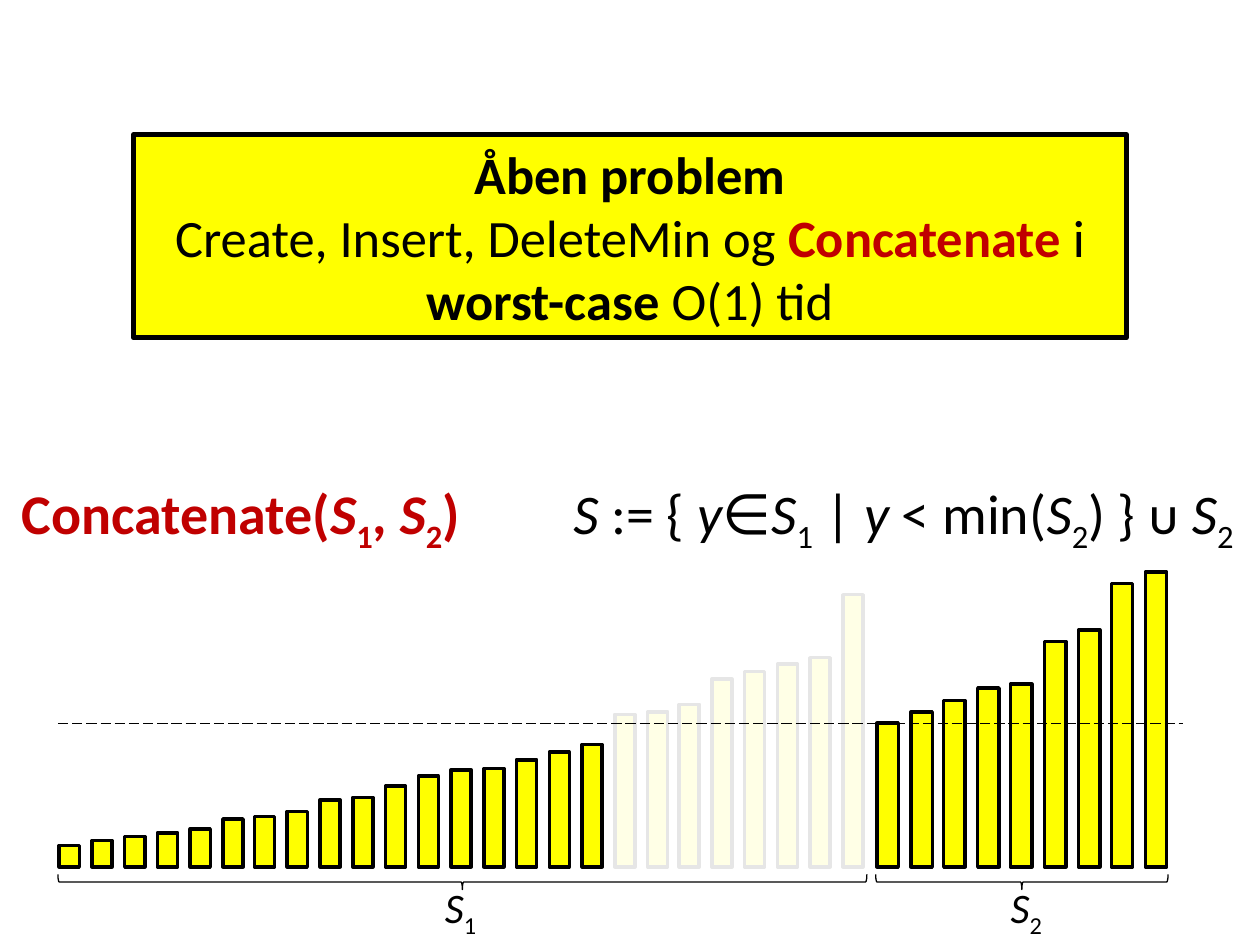
"""Build the slide stating the open problem of constant-time Concatenate."""
from dataclasses import dataclass
from typing import NamedTuple

from lxml.etree import SubElement
from pptx import Presentation
from pptx.dml.color import RGBColor
from pptx.enum.dml import MSO_LINE_DASH_STYLE as Dash
from pptx.enum.shapes import MSO_CONNECTOR as Connector, MSO_SHAPE as Shape
from pptx.enum.text import MSO_ANCHOR as Anchor, MSO_AUTO_SIZE as AutoSize, PP_ALIGN as Align
from pptx.oxml.ns import qn
from pptx.util import Emu, Pt

EMU_PER_PX = 9144


@dataclass(frozen=True)
class Theme:
    font: str = "Calibri"
    ink: RGBColor = RGBColor(0, 0, 0)
    paper: RGBColor = RGBColor(255, 255, 255)
    highlight: RGBColor = RGBColor(255, 255, 0)
    accent: RGBColor = RGBColor(192, 0, 0)
    problem_size: int = 30
    formula_size: int = 32
    label_size: int = 24
    thin: float = 0.75
    bar_line: float = 2
    box_line: float = 3


THEME = Theme()


class Box(NamedTuple):
    left: int
    top: int
    width: int
    height: int


class Run(NamedTuple):
    text: str
    bold: bool = False
    italic: bool = False
    subscript: bool = False
    color: RGBColor = THEME.ink


@dataclass(frozen=True)
class BarGroup:
    index: str
    left: int
    span: int
    bar_width: int
    tops: tuple[int, ...]
    brace: Box
    label: Box


BASELINE = 688
BAR_GROUPS = (
    BarGroup(
        "1", 47, 622, 16,
        (671, 667, 664, 661, 658, 650, 648, 644, 635, 633, 624, 616, 611,
         610, 603, 597, 591, 567, 565, 559, 539, 533, 527, 522, 472),
        Box(361, 379, 12, 642), Box(287, 695, 157, 50),
    ),
    BarGroup(
        "2", 696, 213, 17,
        (574, 565, 556, 546, 543, 509, 500, 463, 454),
        Box(805, 584, 12, 232), Box(736, 695, 157, 50),
    ),
)


def px(length: float) -> Emu:
    """Turn px into EMU."""
    return Emu(round(length * EMU_PER_PX))


def place(box: Box) -> tuple[Emu, ...]:
    """Turn a box into EMU lengths."""
    return tuple(px(length) for length in box)


def set_name(index: str, bold: bool = False, color: RGBColor = THEME.ink) -> list[Run]:
    """Return the runs of an indexed set S."""
    return [Run("S", bold, True, color=color), Run(index, bold, subscript=True, color=color)]


def write(paragraph, runs: list[Run], size: int) -> None:
    """Add centred runs to a paragraph."""
    paragraph.alignment = Align.CENTER
    for item in runs:
        run = paragraph.add_run()
        run.text = item.text
        font = run.font
        font.name, font.size = THEME.font, Pt(size)
        font.bold, font.italic = item.bold, item.italic
        font.color.rgb = item.color
        if item.subscript:
            font._element.set("baseline", "-25000")


def draw_rectangle(slide, box: Box, fill: RGBColor, line_width: float = 0):
    """Draw a filled rectangle, outlined when a line width is given."""
    shape = slide.shapes.add_shape(Shape.RECTANGLE, *place(box))
    shape.shadow.inherit = False
    shape.fill.solid()
    shape.fill.fore_color.rgb = fill
    if line_width:
        shape.line.color.rgb = THEME.ink
        shape.line.width = Pt(line_width)
    else:
        shape.line.fill.background()
    return shape


def draw_problem(slide) -> None:
    """Draw the highlighted problem statement."""
    shape = draw_rectangle(slide, Box(106, 107, 788, 161), THEME.highlight, THEME.box_line)
    frame = shape.text_frame
    frame.word_wrap = True
    frame.vertical_anchor = Anchor.MIDDLE
    write(frame.paragraphs[0], [Run("Åben problem", True)], THEME.problem_size)
    statement = [
        Run("Create, Insert, DeleteMin og "),
        Run("Concatenate", True, color=THEME.accent),
        Run(" i "),
        Run("worst-case ", True),
        Run("O(1) tid"),
    ]
    write(frame.add_paragraph(), statement, THEME.problem_size)


def draw_bars(slide, group: BarGroup) -> None:
    """Draw evenly spaced bars standing on the baseline."""
    pitch = group.span / (len(group.tops) - 1)
    for position, top in enumerate(group.tops):
        left = round(group.left + position * pitch)
        box = Box(left, top, group.bar_width, BASELINE - top)
        draw_rectangle(slide, box, THEME.highlight, THEME.bar_line)


def draw_formula(slide) -> None:
    """Write the definition of Concatenate in the body placeholder."""
    body = slide.placeholders[1]
    body.left, body.top, body.width, body.height = place(Box(4, 375, 988, 63))
    frame = body.text_frame
    frame.word_wrap = True
    frame.auto_size = AutoSize.NONE
    paragraph = frame.paragraphs[0]
    accent = THEME.accent
    runs = [
        Run("Concatenate(", True, color=accent), *set_name("1", True, accent),
        Run(", ", True, color=accent), *set_name("2", True, accent),
        Run(")\t", True, color=accent),
        Run("S", italic=True), Run(" := { "), Run("y", italic=True), Run("∈"),
        *set_name("1"), Run(" | "), Run("y ", italic=True), Run("< min("),
        *set_name("2"), Run(") } ᴜ "), *set_name("2"),
    ]
    write(paragraph, runs, THEME.formula_size)
    properties = paragraph._p.get_or_add_pPr()
    properties.set("marL", str(px(38)))
    properties.set("indent", str(px(-38)))
    properties.set("defTabSz", str(px(100)))
    SubElement(properties, qn("a:buNone"))
    tabs = SubElement(properties, qn("a:tabLst"))
    for position in (235, 400):
        SubElement(tabs, qn("a:tab"), pos=str(px(position)), algn="l")


def draw_veil(slide) -> None:
    """Fade the elements dropped by Concatenate."""
    veil = draw_rectangle(slide, Box(484, 462, 205, 235), THEME.paper)
    color = veil.fill._xPr.find(qn("a:solidFill"))[0]
    SubElement(color, qn("a:alpha"), val="90000")


def draw_brace(slide, group: BarGroup) -> None:
    """Draw the brace under a bar group and its label."""
    brace = slide.shapes.add_shape(Shape.LEFT_BRACE, *place(group.brace))
    brace.rotation = 270
    brace.shadow.inherit = False
    brace.fill.background()
    brace.line.color.rgb = THEME.ink
    brace.line.width = Pt(THEME.thin)
    frame = slide.shapes.add_textbox(*place(group.label)).text_frame
    frame.word_wrap = True
    write(frame.paragraphs[0], set_name(group.index), THEME.label_size)


def draw_threshold(slide) -> None:
    """Draw the dashed line at the minimum of the second set."""
    level = px(BAR_GROUPS[1].tops[0])
    line = slide.shapes.add_connector(Connector.STRAIGHT, px(46), level, px(939), level)
    line.line.color.rgb = THEME.ink
    line.line.width = Pt(THEME.thin)
    line.line.dash_style = Dash.LONG_DASH
    SubElement(line._element.spPr, qn("a:effectLst"))


def main() -> None:
    """Build and save the presentation."""
    presentation = Presentation()
    presentation.slide_width, presentation.slide_height = px(1000), px(750)
    slide = presentation.slides.add_slide(presentation.slide_layouts[1])
    title = slide.shapes.title._element
    title.getparent().remove(title)
    draw_problem(slide)
    for group in BAR_GROUPS:
        draw_bars(slide, group)
    draw_formula(slide)
    draw_veil(slide)
    for group in BAR_GROUPS:
        draw_brace(slide, group)
    draw_threshold(slide)
    presentation.save("out.pptx")


if __name__ == "__main__":
    main()
